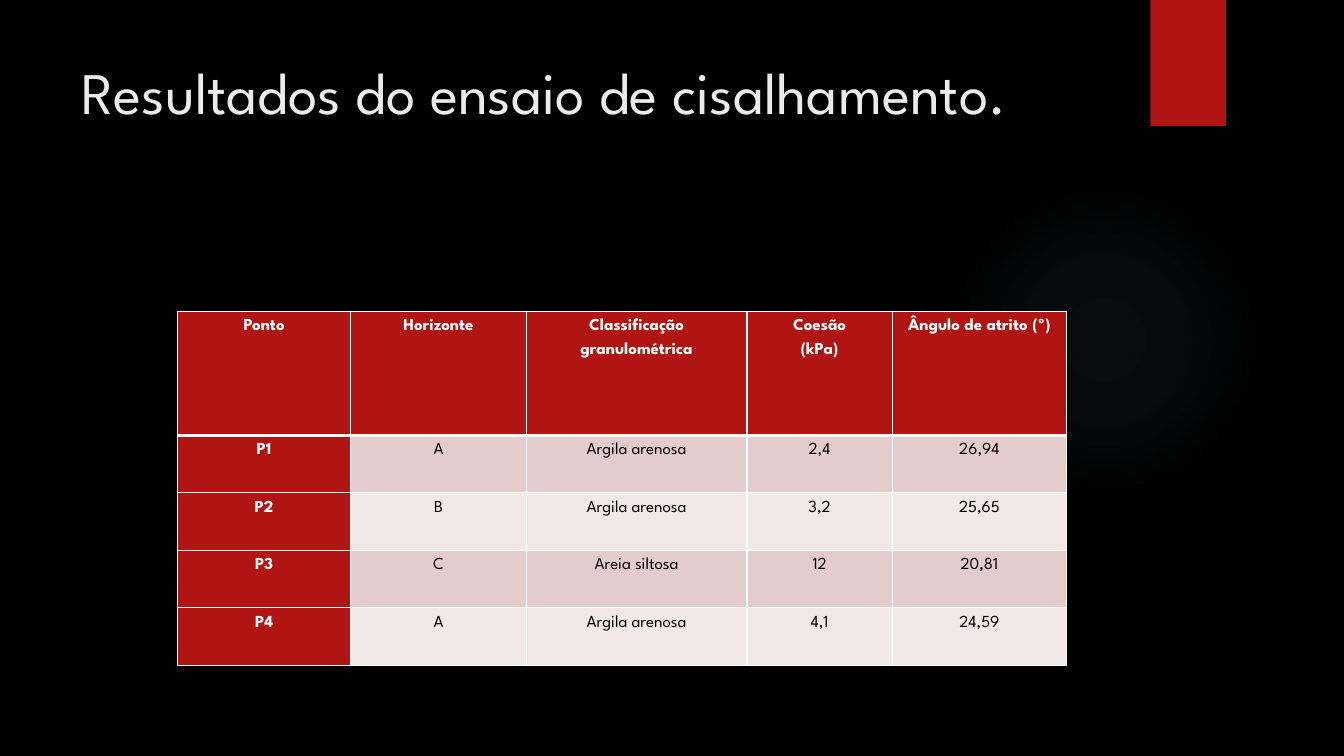
import pptx
import pptx.util
import pptx.oxml
import pptx.oxml.ns
import pptx.dml.color
import pptx.enum.shapes
import pptx.enum.text

Inches, Pt = pptx.util.Inches, pptx.util.Pt
RGBColor = pptx.dml.color.RGBColor
MSO_SHAPE = pptx.enum.shapes.MSO_SHAPE
PP_ALIGN = pptx.enum.text.PP_ALIGN
MSO_ANCHOR = pptx.enum.text.MSO_ANCHOR

BLACK = RGBColor(0x00, 0x00, 0x00)
WHITE = RGBColor(0xFF, 0xFF, 0xFF)
TITLE_GRAY = RGBColor(0xEB, 0xEB, 0xEB)
RED = RGBColor(0xB0, 0x15, 0x13)
BAND_DARK = RGBColor(0xE4, 0xCC, 0xCC)
BAND_LIGHT = RGBColor(0xF2, 0xE8, 0xE7)
GLOW = RGBColor(0x50, 0xB9, 0xC1)
FONT = "League Spartan"
NS = pptx.oxml.ns.nsdecls("a")

COL_WIDTHS = [1.72, 1.74, 2.19, 1.44, 1.73]
ROW_HEIGHTS = [1.23] + [0.57] * 4
ROWS = [
    ["Ponto", "Horizonte", "Classificação granulométrica", "Coesão\n(kPa)", "Ângulo de atrito (º)"],
    ["P1", "A", "Argila arenosa", "2,4", "26,94"],
    ["P2", "B", "Argila arenosa", "3,2", "25,65"],
    ["P3", "C", "Areia siltosa", "12", "20,81"],
    ["P4", "A", "Argila arenosa", "4,1", "24,59"],
]


def add_plain_shape(slide, kind, left, top, width, height):
    sp = slide.shapes.add_shape(kind, Inches(left), Inches(top), Inches(width), Inches(height))
    sp.shadow.inherit = False
    sp.line.fill.background()
    return sp


def add_border(cell, side, width):
    cell._tc.get_or_add_tcPr().append(pptx.oxml.parse_xml(
        f'<a:ln{side} {NS} w="{Pt(width)}"><a:solidFill><a:srgbClr val="{WHITE}"/>'
        f'</a:solidFill></a:ln{side}>'))


prs = pptx.Presentation()
prs.slide_width, prs.slide_height = Inches(13.33), Inches(7.5)
s = prs.slides.add_slide(prs.slide_layouts[5])
s.background.fill.solid()
s.background.fill.fore_color.rgb = BLACK

# Background decoration
glow = add_plain_shape(s, MSO_SHAPE.OVAL, 9.41, 1.83, 3.08, 3.08)
glow.fill.background()
stops = "".join(
    f'<a:gs pos="{pos * 1000}"><a:srgbClr val="{GLOW}"><a:alpha val="{alpha * 1000}"/></a:srgbClr></a:gs>'
    for pos, alpha in [(0, 7), (36, 6), (69, 0)])
spPr = glow.element.spPr
spPr.replace(spPr.find(pptx.oxml.ns.qn("a:noFill")), pptx.oxml.parse_xml(
    f'<a:gradFill {NS}><a:gsLst>{stops}</a:gsLst><a:path path="circle">'
    '<a:fillToRect l="50000" t="50000" r="50000" b="50000"/></a:path></a:gradFill>'))

ribbon = add_plain_shape(s, MSO_SHAPE.RECTANGLE, 11.41, 0, 0.75, 1.25)
ribbon.fill.solid()
ribbon.fill.fore_color.rgb = RED

# Title
title = s.shapes.title
title.left, title.top = Inches(0.71), Inches(0.5)
title.width, title.height = Inches(10.29), Inches(1.53)
tf = title.text_frame
tf.text = "Resultados do ensaio de cisalhamento."
tf.word_wrap = True
tf.auto_size = pptx.enum.text.MSO_AUTO_SIZE.NONE
tf.vertical_anchor = MSO_ANCHOR.TOP
p = tf.paragraphs[0]
p.alignment = PP_ALIGN.LEFT
p.font.name, p.font.size = FONT, Pt(42)
p.font.color.rgb = TITLE_GRAY

# Shear test results
table = s.shapes.add_table(len(ROWS), len(COL_WIDTHS), Inches(1.76), Inches(3.09),
                           Inches(sum(COL_WIDTHS)), Inches(sum(ROW_HEIGHTS))).table
table.first_col = True
for column, width in zip(table.columns, COL_WIDTHS):
    column.width = Inches(width)
for row, height in zip(table.rows, ROW_HEIGHTS):
    row.height = Inches(height)

for i, values in enumerate(ROWS):
    for j, value in enumerate(values):
        cell = table.cell(i, j)
        heading = i == 0 or j == 0
        cell.text = value
        cell.margin_left = cell.margin_right = Inches(0.07)
        cell.margin_top = cell.margin_bottom = 0
        cell.vertical_anchor = MSO_ANCHOR.TOP
        add_border(cell, "L", 1)
        add_border(cell, "R", 1)
        add_border(cell, "T", 3 if i == 1 else 1)
        add_border(cell, "B", 3 if i == 0 else 1)
        cell.fill.solid()
        cell.fill.fore_color.rgb = RED if heading else BAND_DARK if i % 2 else BAND_LIGHT
        for p in cell.text_frame.paragraphs:
            p.alignment = PP_ALIGN.CENTER
            p.line_spacing = 1.5
            p.font.name, p.font.size = FONT, Pt(12)
            p.font.bold = heading
            p.font.color.rgb = WHITE if heading else BLACK

prs.save("out.pptx")
